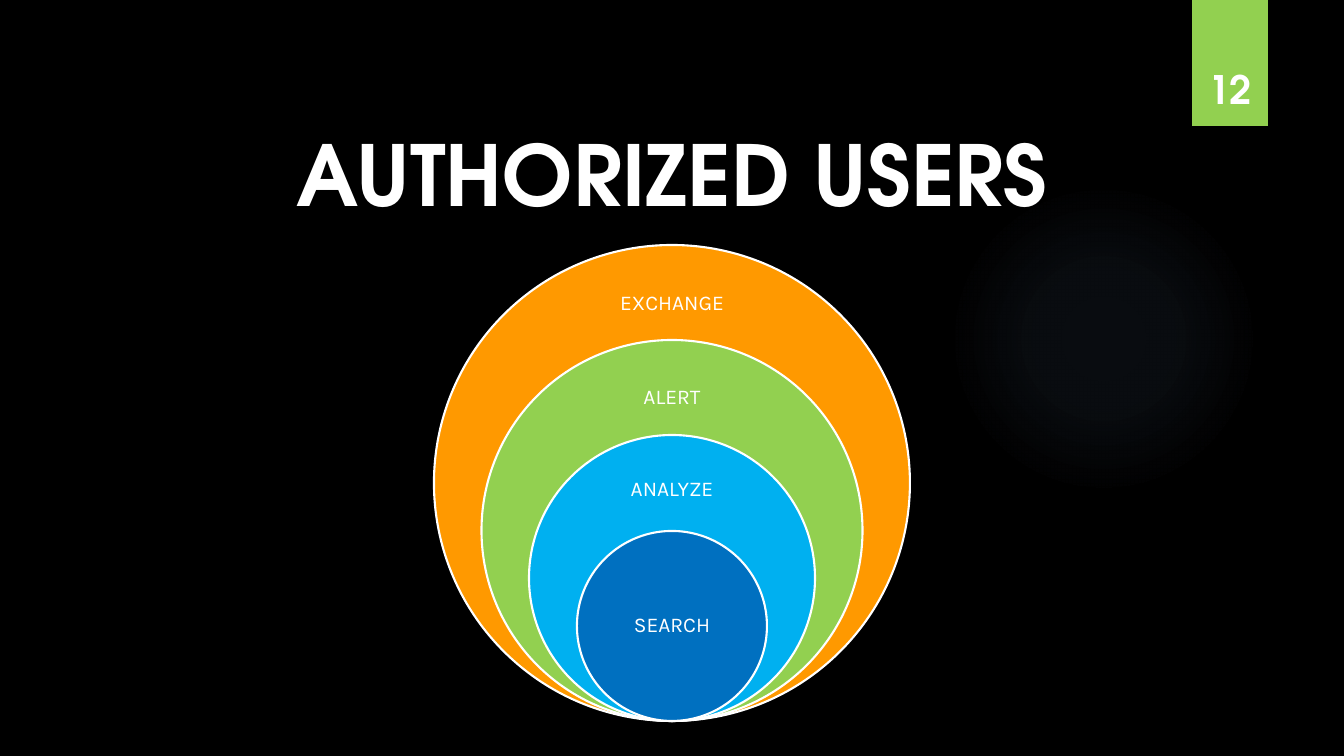
from dataclasses import dataclass

from lxml.etree import SubElement
from pptx import Presentation
from pptx.dml.color import RGBColor
from pptx.enum.shapes import MSO_SHAPE
from pptx.enum.text import MSO_ANCHOR, MSO_AUTO_SIZE, PP_ALIGN
from pptx.oxml import parse_xml
from pptx.oxml.ns import nsdecls, qn
from pptx.util import Emu, Pt


@dataclass(frozen=True)
class Theme:
    black: str = "000000"
    white: str = "FFFFFF"
    orange: str = "FF9900"
    green: str = "92D050"
    sky: str = "00B0F0"
    blue: str = "0070C0"
    glow: str = "82B1E5"
    heading_font: str = "TeX Gyre Adventor"
    label_font: str = "Karla"
    title_size: int = 60
    number_size: int = 28
    label_size: int = 15
    outline: float = 1.5


THEME = Theme()
WIDTH, HEIGHT = 1344, 756
CENTER = WIDTH // 2
STACK_BOTTOM = 721
OUTER_DIAMETER = 476
LABEL_WIDTH = 133

# Name, fill, diameter in fifths of the outer circle, label top and height
RINGS = [
    ("EXCHANGE", THEME.orange, 5, 268, 72),
    ("ALERT", THEME.green, 4, 363, 69),
    ("ANALYZE", THEME.sky, 3, 457, 65),
    ("SEARCH", THEME.blue, 2, 578, 95),
]


def px(length):
    return Emu(round(length * 914400 * 7.5 / HEIGHT))


def rgb(color):
    return RGBColor.from_string(color)


def apply_format(target, values):
    for name, value in values.items():
        setattr(target, name, value)


def place(shape, left, top, width, height):
    apply_format(shape, {"left": px(left), "top": px(top),
                         "width": px(width), "height": px(height)})


def write(shape, text, frame_format, font_format, line_spacing=1.0):
    """Put one centred white line of text in a shape."""
    frame = shape.text_frame
    apply_format(frame, {"word_wrap": True, **frame_format})
    line = frame.paragraphs[0]
    line.text = text
    apply_format(line, {"alignment": PP_ALIGN.CENTER, "line_spacing": line_spacing})
    font = line.runs[0].font
    apply_format(font, font_format)
    font.color.rgb = rgb(THEME.white)


def heading_format(size):
    return {"name": THEME.heading_font, "size": Pt(size), "bold": True}


def add_text(slide, box, *content):
    write(slide.shapes.add_textbox(*map(px, box)), *content)


def add_block(slide, kind, box, color, outlined=False):
    block = slide.shapes.add_shape(kind, *map(px, box))
    block.shadow.inherit = False
    block.fill.solid()
    block.fill.fore_color.rgb = rgb(color)
    if outlined:
        block.line.color.rgb = rgb(THEME.white)
        block.line.width = Pt(THEME.outline)
    else:
        block.line.fill.background()
    return block


def add_glow(slide, box):
    """Add a circle that fades out from its centre."""
    glow = add_block(slide, MSO_SHAPE.OVAL, box, THEME.glow)
    stops = "".join(
        f'<a:gs pos="{position * 1000}"><a:srgbClr val="{THEME.glow}">'
        f'<a:alpha val="{opacity * 1000}"/></a:srgbClr></a:gs>'
        for position, opacity in [(0, 7), (36, 6), (69, 0)])
    gradient = parse_xml(
        f'<a:gradFill {nsdecls("a")}><a:gsLst>{stops}</a:gsLst><a:path path="circle">'
        '<a:fillToRect l="50000" t="50000" r="50000" b="50000"/></a:path></a:gradFill>')
    properties = glow.element.spPr
    properties.replace(properties.find(qn("a:solidFill")), gradient)


def add_drop_shadow(shape):
    effects = shape.element.spPr.find(qn("a:effectLst"))
    shadow = SubElement(effects, qn("a:outerShdw"), blurRad=str(Pt(3)),
                        dist=str(Pt(2)), dir="5400000", rotWithShape="0")
    color = SubElement(shadow, qn("a:srgbClr"), val=THEME.black)
    SubElement(color, qn("a:alpha"), val="45000")


def add_ring(slide, name, color, fifths, label_top, label_height):
    diameter = round(OUTER_DIAMETER * fifths / 5)
    box = (CENTER - diameter / 2, STACK_BOTTOM - diameter, diameter, diameter)
    add_block(slide, MSO_SHAPE.OVAL, box, color, outlined=True)
    margins = {f"margin_{side}": px(12) for side in ("left", "top", "right", "bottom")}
    add_text(slide, (CENTER - LABEL_WIDTH / 2, label_top, LABEL_WIDTH, label_height), name,
             {"vertical_anchor": MSO_ANCHOR.MIDDLE, **margins},
             {"name": THEME.label_font, "size": Pt(THEME.label_size)}, 0.9)


def main():
    deck = Presentation()
    apply_format(deck, {"slide_width": px(WIDTH), "slide_height": px(HEIGHT)})
    slide = deck.slides.add_slide(deck.slide_layouts[5])

    # Background and glow
    slide.background.fill.solid()
    slide.background.fill.fore_color.rgb = rgb(THEME.black)
    add_glow(slide, (949, 184, 310, 310))

    # Slide number tab
    tab = add_block(slide, MSO_SHAPE.RECTANGLE, (1192, 0, 76, 126), THEME.green)
    add_drop_shadow(tab)
    add_text(slide, (1184, 32, 92, 85), "12", {"vertical_anchor": MSO_ANCHOR.BOTTOM},
             heading_format(THEME.number_size))

    # Title
    title = slide.shapes.title
    place(title, 0, 117, WIDTH, 112)
    write(title, "AUTHORIZED USERS",
          {"vertical_anchor": MSO_ANCHOR.TOP, "auto_size": MSO_AUTO_SIZE.SHAPE_TO_FIT_TEXT},
          heading_format(THEME.title_size))

    # Nested circles, from the outermost in
    for ring in RINGS:
        add_ring(slide, *ring)

    deck.save("out.pptx")


if __name__ == "__main__":
    main()
